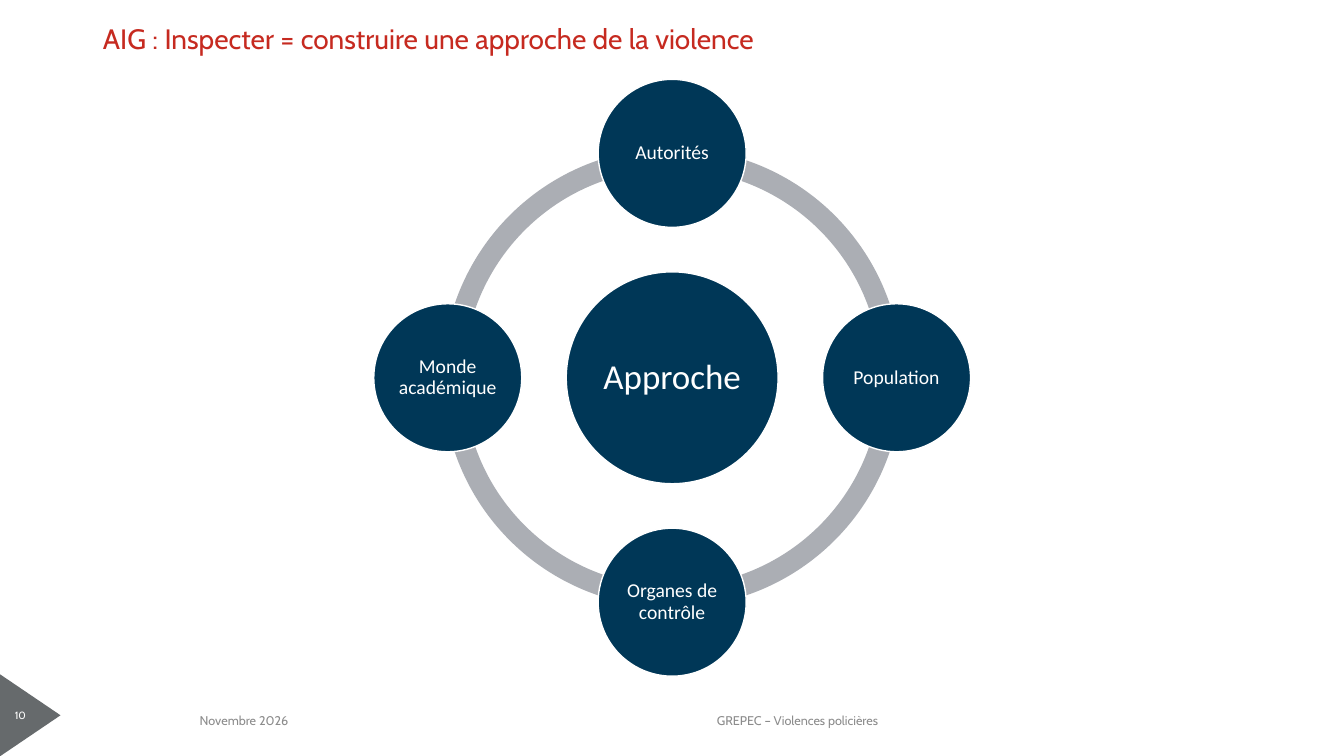
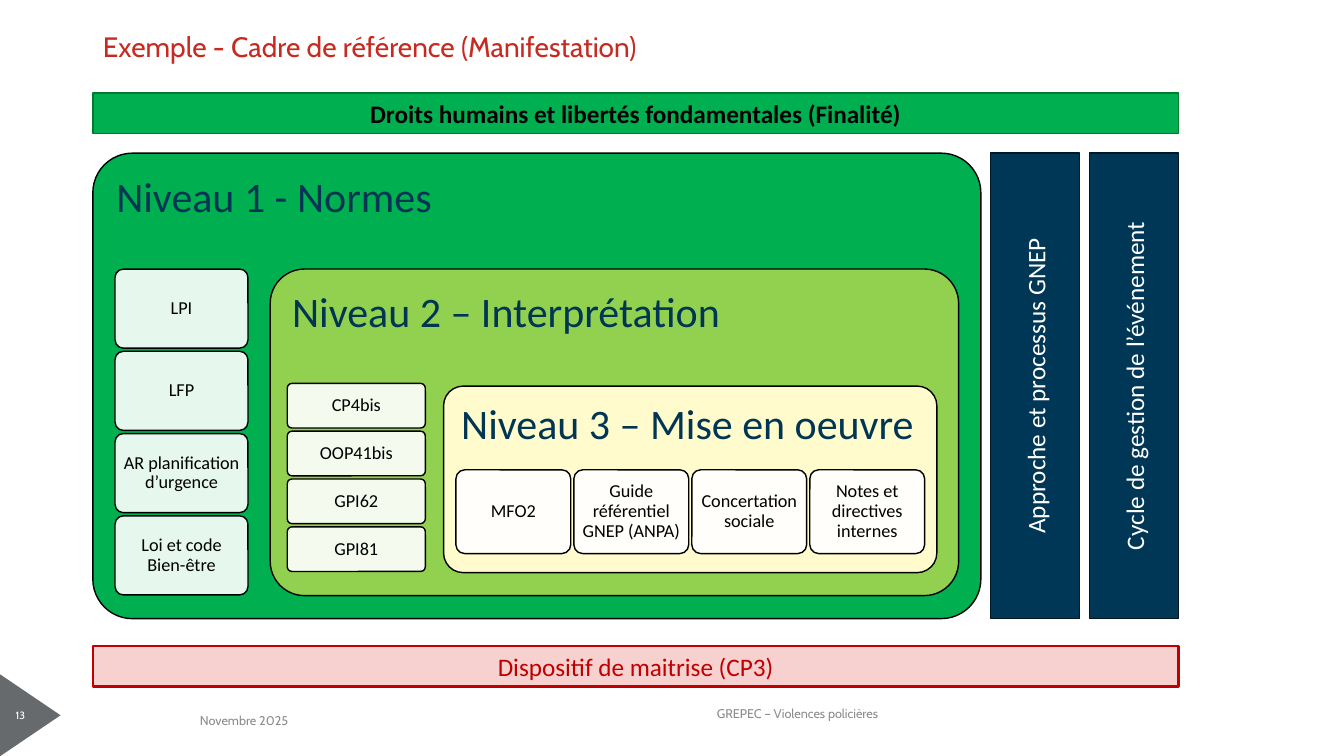
from math import cos, pi, sin

from lxml.etree import SubElement
from pptx import Presentation
from pptx.dml.color import RGBColor
from pptx.enum.shapes import MSO_SHAPE
from pptx.enum.text import MSO_ANCHOR, PP_ALIGN
from pptx.oxml.ns import qn
from pptx.util import Cm, Pt

NAVY, INK, RED, GREY, WHITE, BLACK = "003757", "003554", "C62A20", "8C8C8C", "FFFFFF", "000000"
GREEN, LIME, CREAM = "00B050", "92D050", "FFFBCC"
GAP = 0.08


def rgb(value):
    """Turn a hex string into a colour."""
    return RGBColor.from_string(value)


def write(tf, text, size, color, font="Calibri", align=PP_ALIGN.CENTER,
          anchor=MSO_ANCHOR.MIDDLE, bold=False, spacing=None):
    """Write one formatted paragraph into a text frame."""
    tf.word_wrap = True
    tf.vertical_anchor = anchor
    p = tf.paragraphs[0]
    p.alignment = align
    p.line_spacing = spacing
    r = p.add_run()
    r.text = text
    r.font.name, r.font.size, r.font.bold = font, Pt(size), bold
    r.font.color.rgb = rgb(color)


def inset(tf, left, top, right, bottom):
    """Set the inner margins of a text frame."""
    tf.margin_left, tf.margin_top = Cm(left), Cm(top)
    tf.margin_right, tf.margin_bottom = Cm(right), Cm(bottom)


def add_box(s, kind, box, fill, line=None, width=1, adj=(), alpha=None):
    """Draw a flat preset shape."""
    sp = s.shapes.add_shape(kind, *map(Cm, box))
    sp.shadow.inherit = False
    for i, value in enumerate(adj):
        sp.adjustments[i] = value
    sp.fill.solid()
    sp.fill.fore_color.rgb = rgb(fill)
    if alpha:
        clr = sp.element.spPr.find(qn("a:solidFill")).find(qn("a:srgbClr"))
        SubElement(clr, qn("a:alpha")).set("val", str(alpha * 1000))
    if line:
        sp.line.color.rgb = rgb(line)
        sp.line.width = Pt(width)
    else:
        sp.line.fill.background()
    return sp


def add_label(s, box, text, size, color):
    """Add a centred text box in the heading font."""
    tf = s.shapes.add_textbox(*map(Cm, box)).text_frame
    write(tf, text, size, color, font="Cabin")
    return tf


def new_slide(prs, title, title_box, number, date, footer_top=17.65):
    """Add a slide with its title, page marker and footers."""
    s = prs.slides.add_slide(prs.slide_layouts[5])
    marker = add_box(s, MSO_SHAPE.ISOSCELES_TRIANGLE, (-0.3, 17.25, 2.1, 1.55), "666A6C")
    marker.rotation = 90
    tf = add_label(s, (-0.03, 17.5, 1.09, 1.07), number, 7.5, WHITE)
    inset(tf, 0.18, 0.1, 0.18, 0.1)
    sp = s.shapes.title
    sp.left, sp.top, sp.width, sp.height = map(Cm, title_box)
    write(sp.text_frame, title, 20, RED, font="Cabin", align=PP_ALIGN.LEFT, spacing=0.9)
    add_label(s, (2.34, 17.65, 7.62, 1.02), date, 9, GREY)
    add_label(s, (11.23, footer_top, 17.73, 1.02), "GREPEC – Violences policières", 9, GREY)
    return s


def add_disc(s, cx, cy, size, text, font_size):
    """Draw a labelled disc around a centre."""
    sp = add_box(s, MSO_SHAPE.OVAL, (cx - size / 2, cy - size / 2, size, size), NAVY, WHITE)
    inset(sp.text_frame, 0.05, 0.05, 0.05, 0.05)
    write(sp.text_frame, text, font_size, WHITE, spacing=0.9)


def add_wheel(s, x, y, size, hub, labels):
    """Draw a hub and satellites on a ring, clockwise from the top."""
    cx, cy = x + size / 2, y + size / 2
    ring, disc = size * 0.77, size * 0.248
    orbit = (size - disc) / 2
    step = 216 / len(labels)
    for i in range(len(labels)):
        add_box(s, MSO_SHAPE.BLOCK_ARC, (cx - ring / 2, cy - ring / 2, ring, ring), "ABAEB4",
                adj=(i * step, (i + 1) * step % 216, 0.046))
    add_disc(s, cx, cy, size * 0.355, hub, 25)
    for i, text in enumerate(labels):
        angle = 2 * pi * i / len(labels)
        add_disc(s, cx + orbit * sin(angle), cy - orbit * cos(angle), disc, text, 14)


def add_cards(s, x, y, w, h, labels, across=False):
    """Share a box equally between cards, in a row or a column."""
    n = len(labels)
    cw = (w - GAP * (n - 1)) / n if across else w
    ch = h if across else (h - GAP * (n - 1)) / n
    for i, text in enumerate(labels):
        cx = x + i * (cw + GAP) if across else x
        cy = y if across else y + i * (ch + GAP)
        sp = add_box(s, MSO_SHAPE.ROUNDED_RECTANGLE, (cx, cy, cw, ch), WHITE, BLACK,
                     adj=(0.105,), alpha=90)
        inset(sp.text_frame, 0.13, 0.13, 0.13, 0.13)
        write(sp.text_frame, text, 13, BLACK, spacing=0.9)


def add_levels(s, x, y, w, h):
    """Draw the three nested levels with their cards."""
    levels = [
        ("Niveau 1 - Normes", GREEN, 0.085, (0, 0, w, h), (0.56, 2.92, 3.35, 8.21),
         ["LPI", "LFP", "AR planification d’urgence", "Loi et code Bien-être"]),
        ("Niveau 2 – Interprétation", LIME, 0.105, (4.47, 2.92, w - 5.03, h - 3.5),
         (4.9, 5.8, 3.48, 4.74), ["CP4bis", "OOP41bis", "GPI62", "GPI81"]),
        ("Niveau 3 – Mise en oeuvre", CREAM, 0.105, (8.84, 5.87, w - 9.95, h - 7.03),
         (9.15, 7.98, 11.81, 2.11),
         ["MFO2", "Guide référentiel GNEP (ANPA)", "Concertation sociale",
          "Notes et directives internes"]),
    ]
    for title, fill, radius, (dx, dy, lw, lh), (ix, iy, iw, ih), labels in levels:
        sp = add_box(s, MSO_SHAPE.ROUNDED_RECTANGLE, (x + dx, y + dy, lw, lh), fill, BLACK,
                     adj=(radius,))
        inset(sp.text_frame, 0.3, 0.3, 0.1, 0.1)
        write(sp.text_frame, title, 30, INK, align=PP_ALIGN.LEFT,
              anchor=MSO_ANCHOR.TOP, spacing=0.9)
        add_cards(s, x + ix, y + iy, iw, ih, labels, across=iw > ih)


def add_bar(s, box, text, fill, line, color, width=1, bold=False, vertical=False):
    """Draw a labelled bar, optionally reading upwards."""
    sp = add_box(s, MSO_SHAPE.RECTANGLE, box, fill, line, width)
    write(sp.text_frame, text, 18, color, bold=bold)
    if vertical:
        sp.element.txBody.bodyPr.set("vert", "vert270")


def add_framework(s, x, y, w, h):
    """Draw the framework: levels and pillars between two bars."""
    bar, top, height, pillar, gap = 1.02, y + 1.52, h - 3.23, 2.24, 0.25
    levels_w = w - 2 * (pillar + gap)
    add_levels(s, x, top, levels_w, height)
    add_bar(s, (x, y, w, bar), "Droits humains et libertés fondamentales (Finalité)",
            GREEN, "007931", BLACK, bold=True)
    add_bar(s, (x, y + h - bar, w, bar), "Dispositif de maitrise (CP3)",
            "F7D1CF", "C00000", "C00000", width=1.5)
    for i, text in enumerate(["Approche et processus GNEP", "Cycle de gestion de l’événement"]):
        left = x + levels_w + gap + i * (pillar + gap)
        add_bar(s, (left, top, pillar, height), text, NAVY, "001826", WHITE, vertical=True)


def main():
    """Build and save the slides."""
    prs = Presentation()
    prs.slide_width, prs.slide_height = Cm(33.87), Cm(19.05)
    s = new_slide(prs, "AIG : Inspecter = construire une approche de la violence",
                  (2.34, 0.38, 28.35, 1.27), "10", "Novembre 2026")
    add_wheel(s, 9.42, 2, 15.04, "Approche",
              ["Autorités", "Population", "Organes de contrôle", "Monde académique"])
    s = new_slide(prs, "Exemple - Cadre de référence (Manifestation)",
                  (2.34, 0.13, 29.21, 2.2), "13", "Novembre 2025", footer_top=17.47)
    add_framework(s, 2.34, 2.34, 27.36, 14.96)
    prs.save("out.pptx")


if __name__ == "__main__":
    main()
